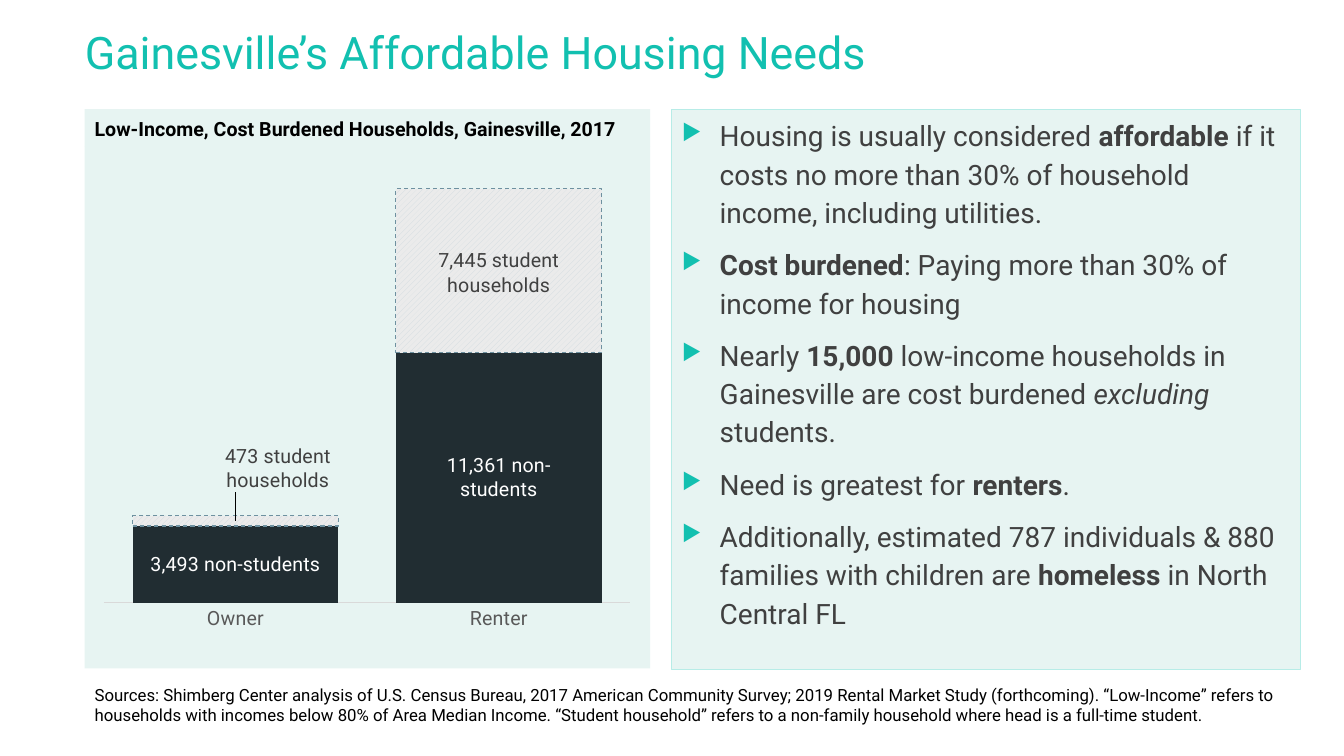
from lxml.etree import SubElement
from pptx import Presentation
from pptx.chart.data import CategoryChartData
from pptx.dml.color import RGBColor
from pptx.enum.chart import XL_CHART_TYPE, XL_LABEL_POSITION, XL_TICK_LABEL_POSITION, XL_TICK_MARK
from pptx.enum.dml import MSO_LINE, MSO_PATTERN
from pptx.enum.shapes import MSO_SHAPE
from pptx.enum.text import MSO_ANCHOR, PP_ALIGN
from pptx.oxml import parse_xml
from pptx.oxml.ns import nsdecls, qn
from pptx.util import Pt

FONT = "Roboto"
COLORS = {
    "teal": "12C0B0", "panel": "E7F4F2", "border": "B7ECE7", "black": "000000",
    "white": "FFFFFF", "text": "404040", "axis": "595959", "rule": "D9D9D9",
    "bar": "212D32", "hatch": "CFDADF", "hatch_back": "EBEBEB", "dash": "6E91A0",
}
CAPTION_HEIGHT = 26.4
LABEL_FORMAT = "#,##0"
TITLE = "Gainesville’s Affordable Housing Needs"
CAPTION = "Low-Income, Cost Burdened Households, Gainesville, 2017"
SOURCES = (
    "Sources: Shimberg Center analysis of U.S. Census Bureau, 2017 American Community Survey; "
    "2019 Rental Market Study (forthcoming). “Low-Income” refers to households with incomes below "
    "80% of Area Median Income. “Student household” refers to a non-family household where head "
    "is a full-time student."
)
POINTS = [
    [("Housing is usually considered ", ""), ("affordable", "b"),
     (" if it costs no more than 30% of household income, including utilities.", "")],
    [("Cost burdened", "b"), (": Paying more than 30% of income for housing", "")],
    [("Nearly ", ""), ("15,000", "b"),
     (" low-income households in Gainesville are cost burdened ", ""),
     ("excluding ", "i"), ("students.", "")],
    [("Need is greatest for ", ""), ("renters", "b"), (".", "")],
    [("Additionally, estimated 787 individuals & 880 families with children are ", ""),
     ("homeless", "b"), (" in North Central FL", "")],
]
HOUSEHOLDS = {
    "Series 1": [(3493, "3,493 non-students"), (11361, "11,361 non-students")],
    "Series 2": [(473, "473 student households"), (7445, "7,445 student households")],
}


def rgb(name):
    """Return the named colour."""
    return RGBColor.from_string(COLORS[name])


def style(font, size, color, bold=False, italic=False):
    """Set the look of a font."""
    font.name, font.size, font.bold, font.italic = FONT, Pt(size), bold, italic
    font.color.rgb = rgb(color)


def add_rectangle(slide, box, fill="panel", line=None):
    """Add a filled rectangle for left-aligned text."""
    s = slide.shapes.add_shape(MSO_SHAPE.RECTANGLE, *map(Pt, box))
    s.shadow.inherit = False
    s.fill.solid()
    s.fill.fore_color.rgb = rgb(fill)
    if line:
        s.line.color.rgb = rgb(line)
        s.line.width = Pt(0.75)
    else:
        s.line.fill.background()
    s.text_frame.word_wrap = True
    return s


def write(tf, text, size, color, bold=False):
    """Write one left-aligned paragraph and return it."""
    tf.word_wrap = True
    tf.text = text
    p = tf.paragraphs[0]
    p.alignment = PP_ALIGN.LEFT
    style(p.runs[0].font, size, color, bold)
    return p


def add_title(slide, box):
    """Add the slide title."""
    tf = add_rectangle(slide, box, "white").text_frame
    tf.vertical_anchor = MSO_ANCHOR.MIDDLE
    write(tf, TITLE, 32, "teal").line_spacing = 0.9


def add_sources(slide, box):
    """Add the source note."""
    write(slide.shapes.add_textbox(*map(Pt, box)).text_frame, SOURCES, 12, "black")


def add_bullet(p):
    """Give a paragraph a hanging teal arrow bullet."""
    pPr = p._p.get_or_add_pPr()
    pPr.set("marL", str(Pt(27)))
    pPr.set("indent", str(Pt(-27)))
    SubElement(SubElement(pPr, qn("a:buClr")), qn("a:srgbClr"), val=COLORS["teal"])
    SubElement(pPr, qn("a:buSzPct"), val="80000")
    SubElement(pPr, qn("a:buFont"), typeface="OpenSymbol")
    SubElement(pPr, qn("a:buChar"), char="▶")


def add_points(slide, box):
    """Add the panel of bulleted points."""
    tf = add_rectangle(slide, box, line="border").text_frame
    tf.vertical_anchor = MSO_ANCHOR.TOP
    for i, parts in enumerate(POINTS):
        p = tf.add_paragraph() if i else tf.paragraphs[0]
        add_bullet(p)
        p.alignment = PP_ALIGN.LEFT
        p.line_spacing = 1.14
        p.space_before = Pt(10 if i else 0)
        for text, mark in parts:
            r = p.add_run()
            r.text = text
            style(r.font, 20, "text", mark == "b", mark == "i")


def add_extension(parent, content):
    """Append a chart extension holding the given XML."""
    parent.append(parse_xml(
        f'<c:extLst {nsdecls("c")}><c:ext uri="{{CE6537A1-D6FC-4f65-9D91-7224C49458BB}}" '
        f'xmlns:c15="http://schemas.microsoft.com/office/drawing/2012/chart">{content}'
        "</c:ext></c:extLst>"))


def add_labels(series, labels, color):
    """Show values without leader lines and write a label on each point."""
    shown = series.data_labels
    shown.show_value = True
    shown.number_format, shown.number_format_is_linked = LABEL_FORMAT, False
    shown.position = XL_LABEL_POSITION.CENTER
    style(shown.font, 14, color)
    for i, text in enumerate(labels):
        label = series.points[i].data_label
        label.text_frame.text = text
        style(label.text_frame.paragraphs[0].runs[0].font, 14, color)
        label.position = XL_LABEL_POSITION.CENTER
    dLbls = series._element.find(qn("c:dLbls"))
    for leader in dLbls.findall(qn("c:showLeaderLines")):
        dLbls.remove(leader)
    add_extension(dLbls, '<c15:showLeaderLines val="0"/>')


def place_label(label, x=0, y=0):
    """Shift a label by chart fractions and narrow it to two lines."""
    label.find(qn("c:idx")).addnext(parse_xml(
        f'<c:layout {nsdecls("c")}><c:manualLayout><c:x val="{x}"/><c:y val="{y}"/>'
        "</c:manualLayout></c:layout>"))
    add_extension(label, '<c15:layout><c:manualLayout><c:w val="0.24"/><c:h val="0.11"/>'
                         "</c:manualLayout></c15:layout>")


def frame_chart(chart):
    """Fill the chart area and fix the inner plot area."""
    space = chart._chartSpace
    space.chart.addnext(parse_xml(
        f'<c:spPr {nsdecls("c", "a")}><a:solidFill><a:srgbClr val="{COLORS["panel"]}"/>'
        "</a:solidFill><a:ln><a:noFill/></a:ln></c:spPr>"))
    area = space.chart.plotArea
    for old in area.findall(qn("c:layout")):
        area.remove(old)
    sizes = "".join(f'<c:{k} val="{v}"/>' for k, v in zip("xywh", (0.034, 0.031, 0.931, 0.844)))
    area.insert(0, parse_xml(
        f'<c:layout {nsdecls("c")}><c:manualLayout><c:layoutTarget val="inner"/>'
        f'<c:xMode val="edge"/><c:yMode val="edge"/>{sizes}</c:manualLayout></c:layout>'))


def add_household_chart(slide, box):
    """Add the captioned stacked column chart."""
    x, y, w, h = box
    data = CategoryChartData(number_format=LABEL_FORMAT)
    data.categories = ["Owner", "Renter"]
    for name, points in HOUSEHOLDS.items():
        data.add_series(name, [value for value, _ in points])
    area = (x, y + CAPTION_HEIGHT, w, h - CAPTION_HEIGHT)
    chart = slide.shapes.add_chart(XL_CHART_TYPE.COLUMN_STACKED, *map(Pt, area), data).chart
    style(chart.font, 14, "black")
    chart.has_legend = chart.has_title = False
    frame_chart(chart)
    plot = chart.plots[0]
    plot.gap_width, plot.overlap, plot.vary_by_categories = 28, 100, False
    for axis in (chart.category_axis, chart.value_axis):
        axis.major_tick_mark = axis.minor_tick_mark = XL_TICK_MARK.NONE
        axis.has_major_gridlines = False
        style(axis.tick_labels.font, 14, "axis")
    chart.category_axis.format.line.color.rgb = rgb("rule")
    chart.category_axis.format.line.width = Pt(0.75)
    values = chart.value_axis
    values.minimum_scale, values.maximum_scale, values.major_unit = 0, 20000, 5000
    values.tick_label_position = XL_TICK_LABEL_POSITION.NONE
    values.format.line.fill.background()
    others, students = plot.series
    others.format.fill.solid()
    others.format.fill.fore_color.rgb = rgb("bar")
    fill, line = students.format.fill, students.format.line
    fill.patterned()
    fill.pattern = MSO_PATTERN.WIDE_UPWARD_DIAGONAL
    fill.fore_color.rgb, fill.back_color.rgb = rgb("hatch"), rgb("hatch_back")
    line.color.rgb, line.width, line.dash_style = rgb("dash"), Pt(0.75), MSO_LINE.DASH
    for series, color in ((others, "white"), (students, "text")):
        add_labels(series, [text for _, text in HOUSEHOLDS[series.name]], color)
    owner, renter = students._element.findall(".//" + qn("c:dLbl"))
    place_label(owner, 0.075, -0.1)
    place_label(renter, 0, 0.005)
    place_label(others._element.findall(".//" + qn("c:dLbl"))[1])
    tf = add_rectangle(slide, (x, y, w, CAPTION_HEIGHT)).text_frame
    write(tf, CAPTION, 14, "black", True).line_spacing = 1.12


def main():
    """Build and save the slide."""
    prs = Presentation()
    prs.slide_width, prs.slide_height = Pt(960), Pt(540)
    slide = prs.slides.add_slide(prs.slide_layouts[6])
    add_title(slide, (53.5, 13, 906.5, 52.5))
    add_household_chart(slide, (60.5, 78, 404, 399.4))
    add_points(slide, (480, 78, 449, 400))
    add_sources(slide, (60.5, 485.5, 868, 36))
    prs.save("out.pptx")


if __name__ == "__main__":
    main()
